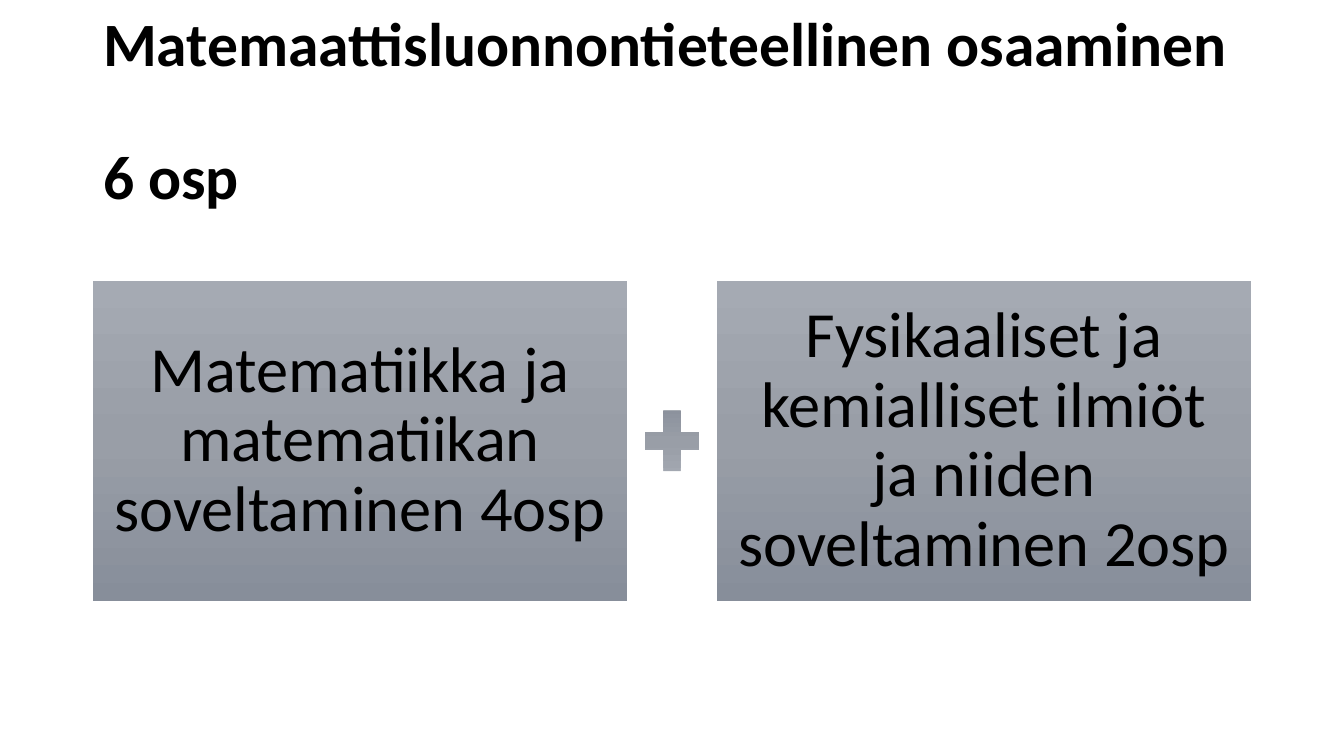
from copy import deepcopy

from pptx import Presentation
from pptx.dml.color import RGBColor
from pptx.enum.shapes import MSO_SHAPE
from pptx.enum.text import MSO_ANCHOR, MSO_AUTO_SIZE, PP_ALIGN
from pptx.util import Emu, Pt

RECTANGLE, PLUS = MSO_SHAPE.RECTANGLE, MSO_SHAPE.MATH_PLUS
MIDDLE, NO_AUTOFIT = MSO_ANCHOR.MIDDLE, MSO_AUTO_SIZE.NONE
LEFT, CENTER = PP_ALIGN.LEFT, PP_ALIGN.CENTER

EMU_PER_PX = 914400 / 100.8
SLIDE_WIDTH, SLIDE_HEIGHT = 1344, 756
TITLE_ONLY_LAYOUT = 5
FONT = "Calibri"
COLORS = {"text": "000000", "top": "A5AAB3", "middle": "999EA7", "bottom": "878E9A"}

TITLE_LINES = ["Matemaattisluonnontieteellinen osaaminen", "6 osp"]
MODULES = [
    "Matematiikka ja matematiikan soveltaminen 4osp",
    "Fysikaaliset ja kemialliset ilmiöt ja niiden soveltaminen 2osp",
]
MARGIN, BOX_TOP, BOX_WIDTH, BOX_HEIGHT, BOX_INSET = 93, 281, 534, 320, 17
PLUS_WIDTH, PLUS_HEIGHT = 73, 82


def px(length):
    return Emu(round(length * EMU_PER_PX))


def format_paragraph(paragraph, size, alignment, bold=False):
    paragraph.alignment = alignment
    paragraph.line_spacing = 0.9
    font = paragraph.font
    font.name, font.size, font.bold = FONT, Pt(size), bold
    font.color.rgb = RGBColor.from_string(COLORS["text"])


def set_title(slide):
    title = slide.shapes.title
    title.left, title.top, title.width, title.height = px(MARGIN), px(40), px(1159), px(146)
    frame = title.text_frame
    frame.text = "\n".join(TITLE_LINES)
    frame.word_wrap = True
    frame.auto_size = NO_AUTOFIT
    frame.vertical_anchor = MIDDLE
    for paragraph in frame.paragraphs:
        format_paragraph(paragraph, 44, LEFT, bold=True)
        paragraph.space_before = Pt(0)
    # One line of space above the credit points
    frame.paragraphs[-1].space_before = Pt(48)


def fill_gradient(shape):
    shape.fill.gradient()
    shape.fill.gradient_angle = 270
    # The default gradient has two stops; add one between them
    first_stop = shape._element.spPr.find(".//{*}gs")
    first_stop.addnext(deepcopy(first_stop))
    names = ("top", "middle", "bottom")
    for index, (stop, name) in enumerate(zip(shape.fill.gradient_stops, names)):
        stop.position = index / 2
        stop.color.rgb = RGBColor.from_string(COLORS[name])


def add_gradient_shape(slide, kind, left, top, width, height):
    shape = slide.shapes.add_shape(kind, px(left), px(top), px(width), px(height))
    shape.shadow.inherit = False
    shape.line.fill.background()
    fill_gradient(shape)
    return shape


def add_module_box(slide, left, text):
    box = add_gradient_shape(slide, RECTANGLE, left, BOX_TOP, BOX_WIDTH, BOX_HEIGHT)
    frame = box.text_frame
    frame.text = text
    frame.word_wrap = True
    frame.vertical_anchor = MIDDLE
    frame.margin_left = frame.margin_right = px(BOX_INSET)
    frame.margin_top = frame.margin_bottom = px(BOX_INSET)
    format_paragraph(frame.paragraphs[0], 46, CENTER)


def add_plus(slide):
    left = (SLIDE_WIDTH - PLUS_WIDTH) / 2
    top = BOX_TOP + (BOX_HEIGHT - PLUS_HEIGHT) / 2
    plus = add_gradient_shape(slide, PLUS, left, top, PLUS_WIDTH, PLUS_HEIGHT)
    plus._element.spPr.xfrm.set("flipV", "1")


def main():
    presentation = Presentation()
    presentation.slide_width, presentation.slide_height = px(SLIDE_WIDTH), px(SLIDE_HEIGHT)
    slide = presentation.slides.add_slide(presentation.slide_layouts[TITLE_ONLY_LAYOUT])

    set_title(slide)

    # Two modules mirrored about the plus sign
    box_lefts = (MARGIN, SLIDE_WIDTH - MARGIN - BOX_WIDTH)
    for left, text in zip(box_lefts, MODULES):
        add_module_box(slide, left, text)
    add_plus(slide)

    presentation.save("out.pptx")


if __name__ == "__main__":
    main()
